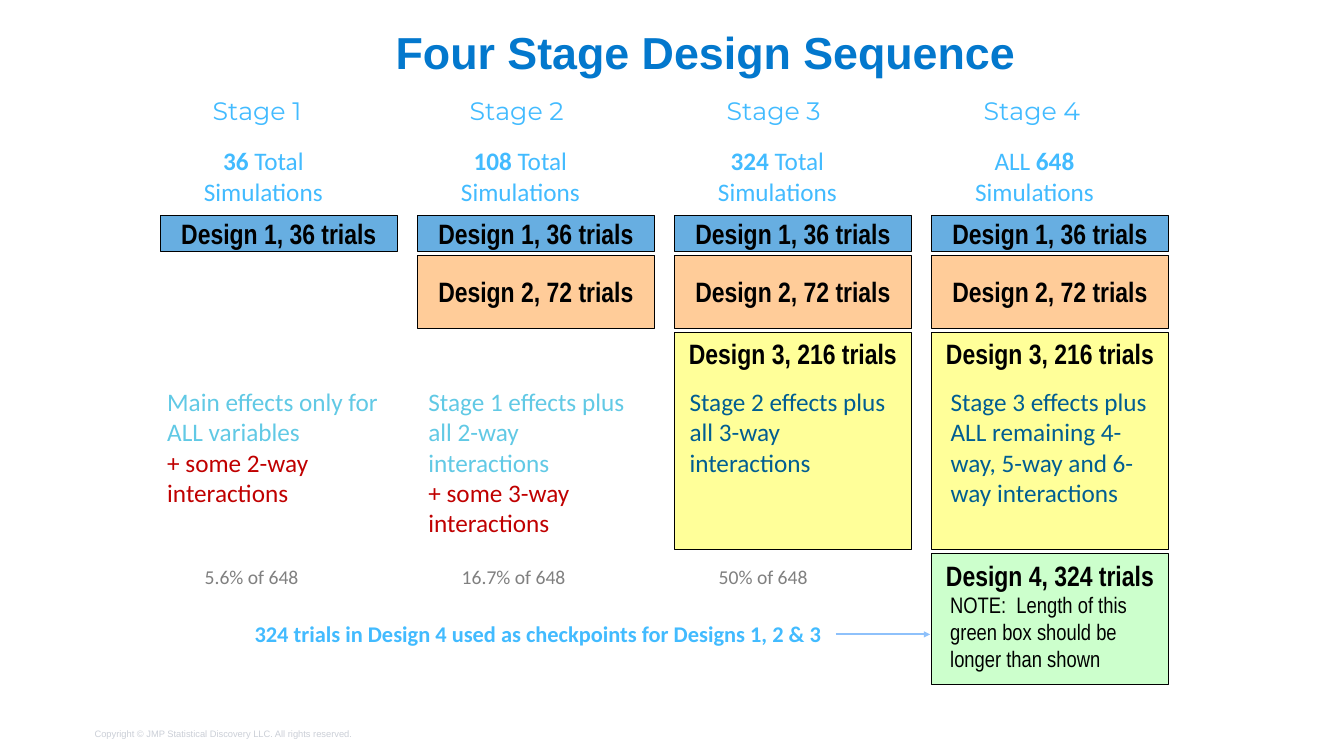
from lxml.etree import SubElement
from pptx import Presentation
from pptx.dml.color import RGBColor
from pptx.enum.shapes import MSO_CONNECTOR, MSO_SHAPE
from pptx.enum.text import MSO_ANCHOR, PP_ALIGN
from pptx.oxml.ns import qn
from pptx.util import Pt

TITLE = "Four Stage Design Sequence"
COPYRIGHT = "Copyright © JMP Statistical Discovery LLC. All rights reserved."
CHECKPOINTS = "324 trials in Design 4 used as checkpoints for Designs 1, 2 & 3"
LENGTH_NOTE = "NOTE:  Length of this green box should be longer than shown"

SKY, TEAL, NAVY, RED = "42BBFF", "61C9E5", "005E92", "C00000"
BLACK, GREY, PALE_GREY = "000000", "808080", "CBCFD7"
BLUE, ARROW_BLUE = "0378CD", "8EC1FB"

# label, height, fill, opacity in percent, anchor
DESIGNS = [
    ("Design 1, 36 trials", 39, BLUE, 60, MSO_ANCHOR.MIDDLE),
    ("Design 2, 72 trials", 78, "FFCC99", 100, MSO_ANCHOR.MIDDLE),
    ("Design 3, 216 trials", 233, "FFFF99", 100, MSO_ANCHOR.TOP),
    ("Design 4, 324 trials", 140.4, "CCFFCC", 100, MSO_ANCHOR.TOP),
]

# "total" holds (text, bold) runs; "effects" holds (text, colour) paragraphs
STAGES = [
    {"total": [("36", True), (" Total", False)],
     "effects": [("Main effects only for ALL variables", TEAL),
                 ("+ some 2-way interactions", RED)],
     "share": "5.6% of 648"},
    {"total": [("108", True), (" Total", False)],
     "effects": [("Stage 1 effects plus all 2-way interactions", TEAL),
                 ("+ some 3-way interactions", RED)],
     "share": "16.7% of 648"},
    {"total": [("324", True), (" Total", False)],
     "effects": [("Stage 2 effects plus all 3-way interactions", NAVY)],
     "share": "50% of 648"},
    {"total": [("ALL ", False), ("648", True)],
     "effects": [("Stage 3 effects plus ALL remaining 4-way, 5-way and "
                  "6-way interactions", NAVY)],
     "share": None},
]

COLUMN_LEFT, COLUMN_PITCH, COLUMN_WIDTH = 172.1, 275.4, 253.4
EFFECTS_PITCH = 279.8
STACK_TOP, STACK_GAP = 230.4, 4.2
NARROW_INSETS = (7.2, 3.6, 7.2, 3.6)
WIDE_INSETS = (10.8, 5.04, 10.8, 5.04)


def rgb(value):
    return RGBColor.from_string(value)


def write(shape, paragraphs, font, size, align=PP_ALIGN.LEFT,
          anchor=MSO_ANCHOR.TOP, insets=NARROW_INSETS, wrap=True):
    """Fill a shape with paragraphs, each a list of (text, colour, bold) runs."""
    frame = shape.text_frame
    frame.word_wrap = wrap
    frame.vertical_anchor = anchor
    (frame.margin_left, frame.margin_top,
     frame.margin_right, frame.margin_bottom) = map(Pt, insets)
    for index, runs in enumerate(paragraphs):
        paragraph = frame.add_paragraph() if index else frame.paragraphs[0]
        paragraph.alignment = align
        for text, color, bold in runs:
            run = paragraph.add_run()
            run.text = text
            run.font.name = font
            run.font.size = Pt(size)
            run.font.bold = bold
            run.font.color.rgb = rgb(color)


def add_text(slide, bounds, paragraphs, font, size, **layout):
    box = slide.shapes.add_textbox(*map(Pt, bounds))
    write(box, paragraphs, font, size, **layout)
    return box


def add_design(slide, left, top, design):
    label, height, fill, opacity, anchor = design
    box = slide.shapes.add_shape(
        MSO_SHAPE.RECTANGLE, Pt(left), Pt(top), Pt(COLUMN_WIDTH), Pt(height))
    box.shadow.inherit = False
    box.fill.solid()
    box.fill.fore_color.rgb = rgb(fill)
    if opacity < 100:
        color = box.fill._xPr.find(qn("a:solidFill"))[0]
        SubElement(color, qn("a:alpha"), val=str(opacity * 1000))
    box.line.color.rgb = rgb(BLACK)
    box.line.width = Pt(0.75)
    write(box, [[(label, BLACK, True)]], "Arial Narrow", 30,
          align=PP_ALIGN.CENTER, anchor=anchor, insets=WIDE_INSETS, wrap=False)


def add_stage(slide, index, stage):
    left = COLUMN_LEFT + index * COLUMN_PITCH
    add_text(slide, (left + 48.6, 99, 143, 40),
             [[(f"Stage {index + 1}", SKY, False)]], "Montserrat", 27)
    total = [(text, SKY, bold) for text, bold in stage["total"]]
    add_text(slide, (left + 35, 152.6, 150, 72.7),
             [total, [("Simulations", SKY, False)]], "Calibri", 27,
             align=PP_ALIGN.CENTER)

    top = STACK_TOP
    for design in DESIGNS[:index + 1]:
        add_design(slide, left, top, design)
        top += design[1] + STACK_GAP

    add_text(slide, (COLUMN_LEFT + index * EFFECTS_PITCH, 410.4, 240.5, 138),
             [[(text, color, False)] for text, color in stage["effects"]],
             "Calibri", 27)
    if stage["share"]:
        add_text(slide, (left + 36.4, 599.8, 140, 36),
                 [[(stage["share"], GREY, False)]], "Calibri", 21,
                 insets=WIDE_INSETS)


def add_arrow(slide, start, end, y):
    arrow = slide.shapes.add_connector(
        MSO_CONNECTOR.STRAIGHT, Pt(start), Pt(y), Pt(end), Pt(y))
    arrow.line.color.rgb = rgb(ARROW_BLUE)
    arrow.line.width = Pt(2.25)
    SubElement(arrow.line._get_or_add_ln(), qn("a:tailEnd"), type="triangle")
    SubElement(arrow._element.spPr, qn("a:effectLst"))


def main():
    deck = Presentation()
    deck.slide_width, deck.slide_height = Pt(1440), Pt(810)
    slide = deck.slides.add_slide(deck.slide_layouts[6])

    add_text(slide, (98.6 + 2.8, 776.2, 396, 19.4),
             [[(COPYRIGHT, PALE_GREY, False)]], "Arial", 10,
             anchor=MSO_ANCHOR.BOTTOM, insets=(0, 3.6, 7.2, 3.6))
    title = add_text(slide, (345.6, 20.2, 820.8, 77.8),
                     [[(TITLE, BLUE, True)]], "Arial", 48,
                     align=PP_ALIGN.CENTER, anchor=MSO_ANCHOR.MIDDLE,
                     insets=(0, 0, 0, 0))
    title.text_frame.paragraphs[0].line_spacing = 0.9

    for index, stage in enumerate(STAGES):
        add_stage(slide, index, stage)

    add_text(slide, (1007.3, 628.6, 244.8, 98),
             [[(LENGTH_NOTE, BLACK, False)]], "Arial Narrow", 24,
             insets=WIDE_INSETS)
    add_text(slide, (259.2, 659.5, 634.3, 40.3),
             [[(CHECKPOINTS, SKY, True)]], "Calibri", 24,
             align=PP_ALIGN.CENTER, insets=WIDE_INSETS, wrap=False)
    add_arrow(slide, 895.7, 996.5, 679.7)
    deck.save("out.pptx")


if __name__ == "__main__":
    main()
